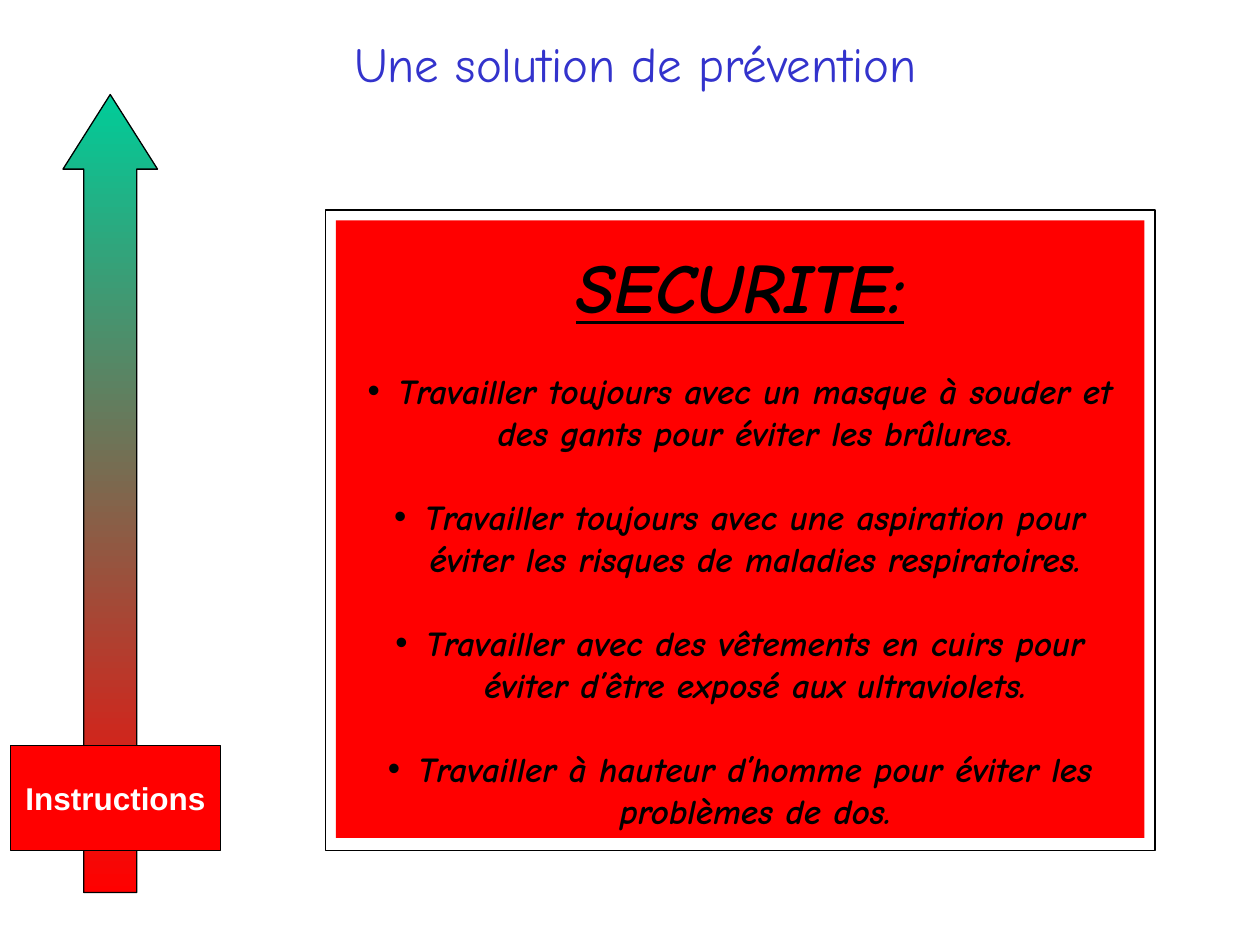
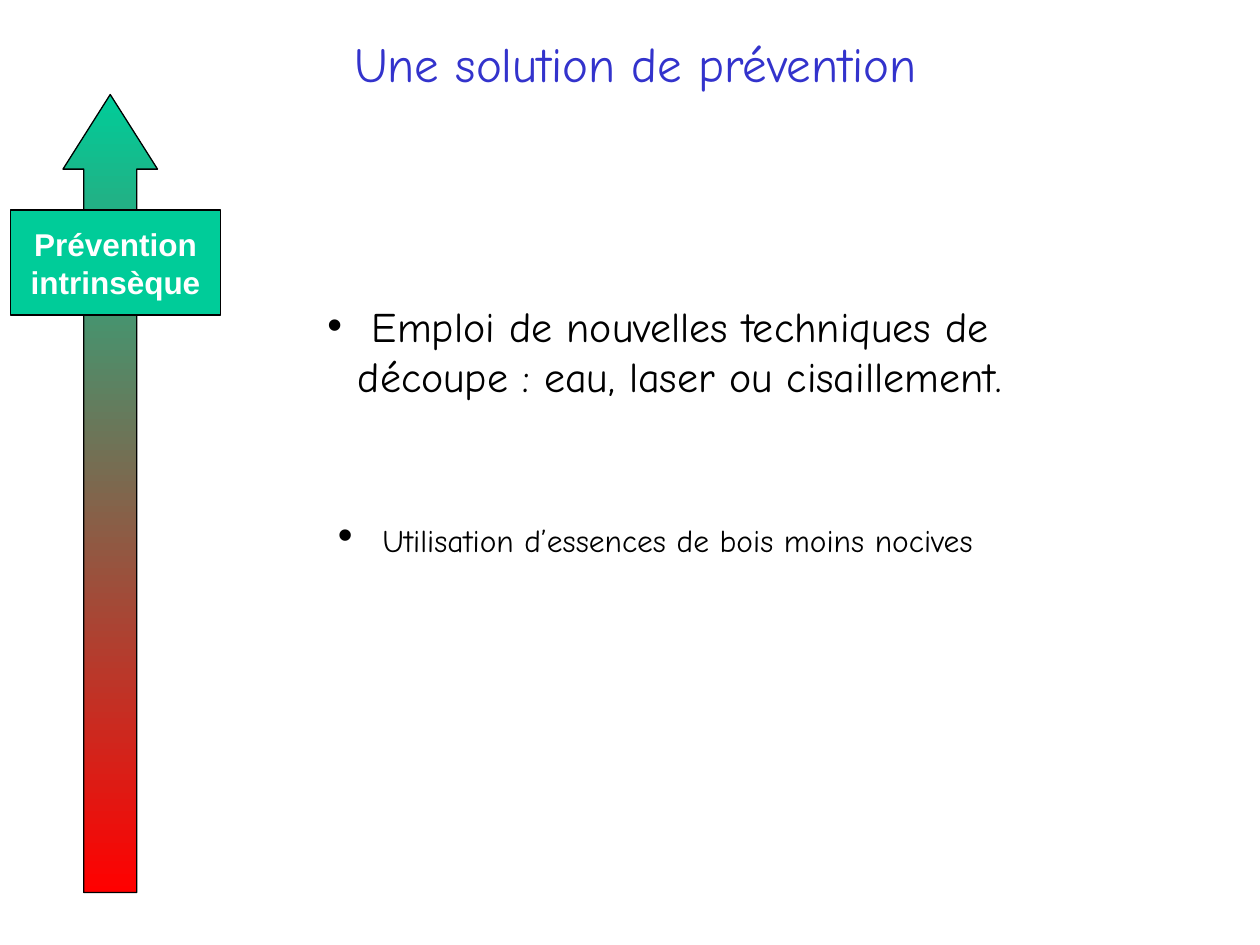
from lxml.etree import SubElement
from pptx import Presentation
from pptx.dml.color import RGBColor
from pptx.enum.shapes import MSO_SHAPE as SHAPE
from pptx.enum.text import MSO_ANCHOR as ANCHOR, MSO_AUTO_SIZE as AUTO_SIZE, PP_ALIGN as ALIGN
from pptx.oxml.ns import qn
from pptx.util import Pt

PX = 7620  # 120 px to the inch
BLUE = RGBColor(0x33, 0x33, 0xCC)
GREEN = RGBColor(0x00, 0xCC, 0x99)
RED = RGBColor(0xFF, 0x00, 0x00)
BLACK = RGBColor(0x00, 0x00, 0x00)
WHITE = RGBColor(0xFF, 0xFF, 0xFF)
HAND, SANS = "Comic Neue", "Arial"
BULLET_INDENT = 29


def add_box(shapes, kind, place, fill=None, line_width=None):
    box = shapes.add_shape(kind, *(n * PX for n in place))
    box.shadow.inherit = False
    if fill is None:
        box.fill.background()
    else:
        box.fill.solid()
        box.fill.fore_color.rgb = fill
    if line_width is None:
        box.line.fill.background()
    else:
        box.line.color.rgb = BLACK
        box.line.width = Pt(line_width)
    return box


def add_text(paragraph, runs, align, font=HAND, color=BLACK, bold=False,
             italic=False, underline=False, bullet=False):
    paragraph.alignment = align
    for text, size in runs:
        run = paragraph.add_run()
        run.text = text
        run.font.name, run.font.size = font, Pt(size)
        run.font.bold, run.font.italic, run.font.underline = bold, italic, underline
        run.font.color.rgb = color
    if bullet:
        properties = paragraph._p.get_or_add_pPr()
        properties.set("marL", str(BULLET_INDENT * PX))
        properties.set("indent", str(-BULLET_INDENT * PX))
        SubElement(properties, qn("a:buFont")).set("typeface", SANS)
        SubElement(properties, qn("a:buChar")).set("char", "•")


prs = Presentation()
prs.slide_width, prs.slide_height = 1200 * PX, 900 * PX

# Shared parts: title, prevention arrow and the level marked on it
levels = [
    (["Instructions"], 710, RED),
    (["Prévention", "intrinsèque"], 200, GREEN),
]
slides = []
for level_lines, level_top, level_color in levels:
    slide = prs.slides.add_slide(prs.slide_layouts[5])
    slides.append(slide)

    title = slide.shapes.title
    title.left, title.top, title.width, title.height = (n * PX for n in (70, 20, 1070, 80))
    title.text_frame.auto_size = AUTO_SIZE.NONE
    title.text_frame.vertical_anchor = ANCHOR.MIDDLE
    add_text(title.text_frame.paragraphs[0], [("Une solution de prévention", 28)],
             ALIGN.CENTER, color=BLUE)

    scale = slide.shapes.add_group_shape()
    arrow = add_box(scale.shapes, SHAPE.UP_ARROW, (60, 90, 90, 760), line_width=0.75)
    arrow.adjustments[0], arrow.adjustments[1] = 0.56, 0.79
    arrow.fill.gradient()
    arrow.fill.gradient_angle = 270
    for stop, color in zip(arrow.fill.gradient_stops, (GREEN, RED)):
        stop.color.rgb = color

    level = add_box(scale.shapes, SHAPE.RECTANGLE, (10, level_top, 200, 100), level_color, 1)
    frame = level.text_frame
    frame.word_wrap = True
    frame.vertical_anchor = ANCHOR.MIDDLE
    for i, text in enumerate(level_lines):
        paragraph = frame.add_paragraph() if i else frame.paragraphs[0]
        add_text(paragraph, [(text, 18)], ALIGN.CENTER, SANS, WHITE, bold=True)

instructions, intrinsic = slides

# Safety notice in a thin frame
add_box(instructions.shapes, SHAPE.RECTANGLE, (310, 200, 790, 610), line_width=0.75)
notice = add_box(instructions.shapes, SHAPE.RECTANGLE, (320, 210, 770, 588), RED)
frame = notice.text_frame
frame.word_wrap = True
frame.vertical_anchor = ANCHOR.TOP
frame.margin_top = 22 * PX
add_text(frame.paragraphs[0], [("SECURITE:", 40)], ALIGN.CENTER,
         bold=True, italic=True, underline=True)
for rule in (
    "Travailler toujours avec un masque à souder et des gants pour éviter les brûlures.",
    "Travailler toujours avec une aspiration pour éviter les risques de maladies respiratoires.",
    "Travailler avec des vêtements en cuirs pour éviter d’être exposé aux ultraviolets.",
    "Travailler à hauteur d’homme pour éviter les problèmes de dos.",
):
    paragraph = frame.add_paragraph()
    paragraph.space_before = Pt(24)
    add_text(paragraph, [(rule, 20)], ALIGN.CENTER, bold=True, italic=True, bullet=True)

# Intrinsic prevention measures
measures = [
    ((300, 280, 670, 300),
     [(" Emploi de nouvelles techniques de découpe : eau, laser ou cisaillement.", 24)]),
    ((310, 480, 680, 60),
     [(" ", 24), ("Utilisation d’essences de bois moins nocives", 18)]),
]
for place, runs in measures:
    measure = intrinsic.shapes.add_textbox(*(n * PX for n in place))
    measure.text_frame.word_wrap = True
    add_text(measure.text_frame.paragraphs[0], runs, ALIGN.LEFT, bullet=True)

prs.save("out.pptx")
